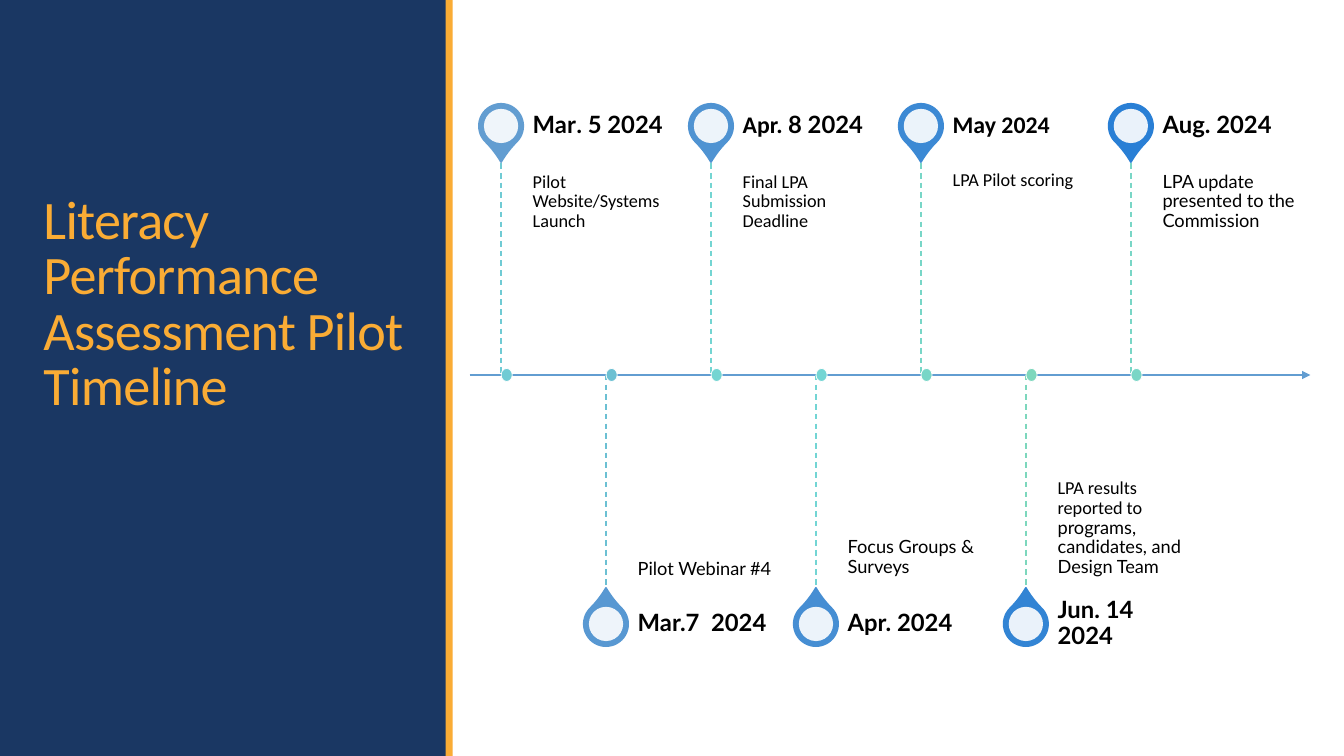
from lxml.etree import SubElement
from pptx import Presentation
from pptx.dml.color import RGBColor
from pptx.enum.dml import MSO_LINE
from pptx.enum.shapes import MSO_CONNECTOR as Link, MSO_SHAPE as Form
from pptx.enum.text import MSO_ANCHOR as Anchor
from pptx.oxml.ns import qn
from pptx.util import Inches, Pt

NAVY = RGBColor(0x1A, 0x37, 0x63)
GOLD = RGBColor(0xFA, 0xAC, 0x35)
BLACK = RGBColor(0, 0, 0)
WHITE = RGBColor(0xFF, 0xFF, 0xFF)
PALE = RGBColor(0x62, 0x9D, 0xD1)
DEEP = RGBColor(0x29, 0x7F, 0xD5)
TEALS = [RGBColor.from_string(code) for code in
         "70CBD4 6CC0D3 74D5D2 73D5D4 78D6C7 7DD7BD 79D6C6".split()]

# All places are percent of the slide's width (x, w) and height (y, h)
AXIS, REACH = 49.6, 28
FIRST, STEP = 37.28, 7.81
GAP, WIDE, HEAD = 2.36, 11.02, 9.87

# Date runs and note runs, each as (words, font)
EVENTS = [
    ([("Mar", "Lato"), (". ", "Calibri"), ("5 2024", "Lato")],
     [("Pilot Website/Systems Launch", "Calibri")]),
    ([("Mar.7  2024", "Lato")], [("Pilot Webinar #4", "Lato")]),
    ([("Apr. ", "Calibri"), ("8 2024", "Lato")],
     [("Final LPA Submission Deadline", "Calibri")]),
    ([("Apr. 2024", "Lato")], [("Focus Groups & Surveys", "Lato")]),
    ([("May 2024", "Calibri")], [("LPA Pilot scoring", "Calibri")]),
    ([("Jun. 14 2024", "Lato")],
     [("LPA results reported to ", "Calibri"),
      ("programs, candidates, and Design Team", "Lato")]),
    ([("Aug. 2024", "Lato")],
     [("LPA update presented to the Commission", "Lato")]),
]


def blend(share):
    """Colour at a share of the way from PALE to DEEP."""
    return RGBColor(*(round(a + (b - a) * share) for a, b in zip(PALE, DEEP)))


class Board:
    def __init__(self):
        self.deck = Presentation()
        self.deck.slide_width, self.deck.slide_height = Inches(13.33), Inches(7.5)
        self.shapes = self.deck.slides.add_slide(self.deck.slide_layouts[6]).shapes

    def place(self, x, y):
        return (round(self.deck.slide_width * x / 100),
                round(self.deck.slide_height * y / 100))

    def shape(self, form, x, y, w, h, fill, edge=None, weight=0):
        item = self.shapes.add_shape(form, *self.place(x, y), *self.place(w, h))
        item.shadow.inherit = False
        item.fill.solid()
        item.fill.fore_color.rgb = fill
        if edge is None:
            item.line.fill.background()
        else:
            item.line.color.rgb = edge
            item.line.width = Pt(weight)
        return item

    def spot(self, form, x, y, w, h, *style):
        """Shape placed by its centre."""
        return self.shape(form, x - w / 2, y - h / 2, w, h, *style)

    def line(self, start, end, color, weight):
        item = self.shapes.add_connector(
            Link.STRAIGHT, *self.place(*start), *self.place(*end))
        item.line.color.rgb = color
        item.line.width = Pt(weight)
        SubElement(item._element.spPr, qn("a:effectLst"))
        return item

    def text(self, x, y, w, h, runs, size, color=BLACK, bold=False,
             anchor=Anchor.TOP, inset=(0, 0, 0, 0), lead=0.9):
        box = self.shapes.add_textbox(*self.place(x, y), *self.place(w, h))
        frame = box.text_frame
        frame.word_wrap = True
        frame.vertical_anchor = anchor
        (frame.margin_left, frame.margin_top,
         frame.margin_right, frame.margin_bottom) = map(Inches, inset)
        para = frame.paragraphs[0]
        para.line_spacing = lead
        para.text = runs[0][0]
        for words, _ in runs[1:]:
            para.add_run().text = words
        fonts = [font for _, font in runs]
        if len(para.runs) > len(fonts):
            fonts = fonts[:1] * len(para.runs)
        for run, font in zip(para.runs, fonts):
            run.font.name, run.font.size = font, Pt(size)
            run.font.bold, run.font.color.rgb = bold, color
        return para

    def title(self, words):
        para = self.text(2.5, 18.53, 29.17, 37.2, [(words, "Calibri")], 38.7, GOLD,
                         anchor=Anchor.BOTTOM, inset=(0.1, 0.05, 0.1, 0.05), lead=0.85)
        for run in para.runs:
            run._r.get_or_add_rPr().set("spc", "-50")

    def axis(self):
        item = self.line((34.95, AXIS), (97.5, AXIS), PALE, 1.5)
        SubElement(item.line._get_or_add_ln(), qn("a:tailEnd"), type="triangle")

    def pin(self, x, y, turn, color):
        drop = self.spot(Form.TEAR, x, y, 3.3, 5.87, color, color, 1.25)
        drop.adjustments[0] = 1.15
        drop.rotation = turn
        hole = self.spot(Form.OVAL, x, y, 2.55, 4.53, WHITE)
        tint = hole._element.spPr.find(qn("a:solidFill"))[0]
        SubElement(tint, qn("a:alpha"), val="90000")

    def event(self, rank, date, note):
        """Draw one milestone: even ranks above the axis, odd ones below."""
        x, teal = FIRST + STEP * rank, TEALS[rank]
        left = x + GAP
        above = rank % 2 == 0
        side = -1 if above else 1
        tip = AXIS + side * REACH
        self.pin(x, tip + side * HEAD / 2, 135 if above else 315,
                 blend(rank / (len(EVENTS) - 1)))
        self.text(left, min(tip, AXIS), WIDE, REACH, note, 13,
                  anchor=Anchor.TOP if above else Anchor.BOTTOM,
                  inset=(0, 0.09, 0.09, 0.14) if above else (0, 0.14, 0, 0.09))
        self.text(left, tip - HEAD if above else tip, WIDE, HEAD, date, 17,
                  bold=True, anchor=Anchor.MIDDLE, inset=(0, 0, 0.12, 0))
        stem = self.line((x, min(tip, AXIS)), (x, max(tip, AXIS)), teal, 1)
        stem.line.dash_style = MSO_LINE.DASH
        self.spot(Form.OVAL, x + 0.42, AXIS, 0.83, 1.73, teal, WHITE, 0.5)


def main():
    board = Board()
    board.shape(Form.RECTANGLE, 0, 0, 33.2, 100, NAVY)
    board.shape(Form.RECTANGLE, 33.15, 0, 0.53, 100, GOLD)
    board.title("Literacy Performance Assessment Pilot\nTimeline")
    board.axis()
    for rank, (date, note) in enumerate(EVENTS):
        board.event(rank, date, note)
    board.deck.save("out.pptx")


if __name__ == "__main__":
    main()
